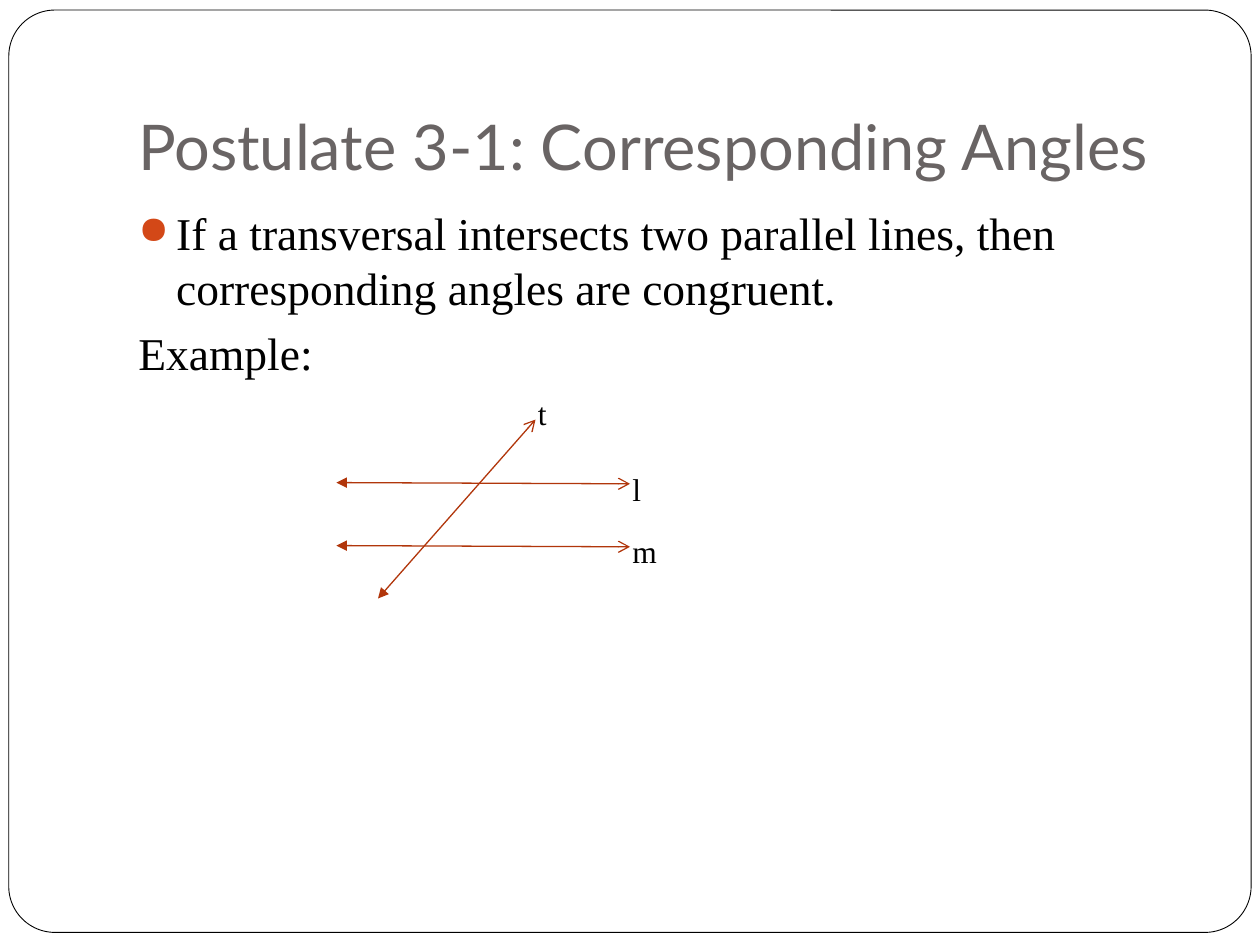
import pptx
import pptx.dml.color
import pptx.enum.shapes
import pptx.enum.text
import pptx.oxml.ns
import pptx.util
from lxml import etree
from pptx.util import Inches

COLORS = {"black": "000000", "white": "FFFFFF", "title": "696464",
          "bullet": "D34817", "line": "B1360B"}
SERIF = "Times New Roman"
qn = pptx.oxml.ns.qn


def rgb(name):
    return pptx.dml.color.RGBColor.from_string(COLORS[name])


def add_text(left, top, width, height, lines, size, font, color):
    """Add a wrapping text box with one paragraph per line; return its frame."""
    frame = slide.shapes.add_textbox(
        Inches(left), Inches(top), Inches(width), Inches(height)).text_frame
    frame.word_wrap = True
    frame.text = "\n".join(lines)
    for paragraph in frame.paragraphs:
        for run in paragraph.runs:
            run.font.size = pptx.util.Pt(size)
            run.font.name = font
            run.font.color.rgb = rgb(color)
    return frame


presentation = pptx.Presentation()
presentation.slide_width = Inches(10)
presentation.slide_height = Inches(7.5)
slide = presentation.slides.add_slide(presentation.slide_layouts[6])

# Rounded border
border = slide.shapes.add_shape(
    pptx.enum.shapes.MSO_SHAPE.ROUNDED_RECTANGLE,
    Inches(0.07), Inches(0.08), Inches(9.86), Inches(7.32))
border.adjustments[0] = 0.05
border.shadow.inherit = False
border.fill.solid()
border.fill.fore_color.rgb = rgb("white")
border.line.color.rgb = rgb("black")
border.line.width = pptx.util.Pt(0.5)

# Title and postulate
title = add_text(1, 0.3, 8.5, 1.25, ["Postulate 3-1: Corresponding Angles"],
                 36, "Lato", "title")
title.vertical_anchor = pptx.enum.text.MSO_ANCHOR.BOTTOM
title.margin_bottom = Inches(0.1)

postulate = add_text(
    1, 1.58, 8.5, 5,
    ["If a transversal intersects two parallel lines, then "
     "corresponding angles are congruent.", "Example:"],
    26, SERIF, "black")
for paragraph in postulate.paragraphs:
    paragraph.space_before = pptx.util.Pt(5.8)
    properties = paragraph._p.get_or_add_pPr()
    properties.set("marL", str(Inches(0.3)))
    properties.set("indent", str(Inches(-0.3)))

bullet = postulate.paragraphs[0]._p.get_or_add_pPr()
bullet_color = etree.SubElement(bullet, qn("a:buClr"))
etree.SubElement(bullet_color, qn("a:srgbClr"), val=COLORS["bullet"])
etree.SubElement(bullet, qn("a:buSzPct"), val="85000")
etree.SubElement(bullet, qn("a:buChar"), char="●")

# Parallel lines l and m, cut by transversal t: start, end, label corner
diagram = {
    "l": ((2.67, 3.83), (5, 3.84), (4.92, 3.68)),
    "m": ((2.67, 4.33), (5, 4.34), (4.92, 4.17)),
    "t": ((3, 4.75), (4.25, 3.33), (4.17, 3.08)),
}
for label, (start, end, corner) in diagram.items():
    line = slide.shapes.add_connector(
        pptx.enum.shapes.MSO_CONNECTOR.STRAIGHT,
        *(Inches(value) for value in start + end))
    line.line.color.rgb = rgb("line")
    line.line.width = pptx.util.Pt(0.75)
    outline = line.line._get_or_add_ln()
    etree.SubElement(outline, qn("a:headEnd"), type="triangle")
    etree.SubElement(outline, qn("a:tailEnd"), type="arrow")
    etree.SubElement(line._element.spPr, qn("a:effectLst"))
    add_text(*corner, 0.58, 0.4, [label], 18, SERIF, "black")

presentation.save("out.pptx")
